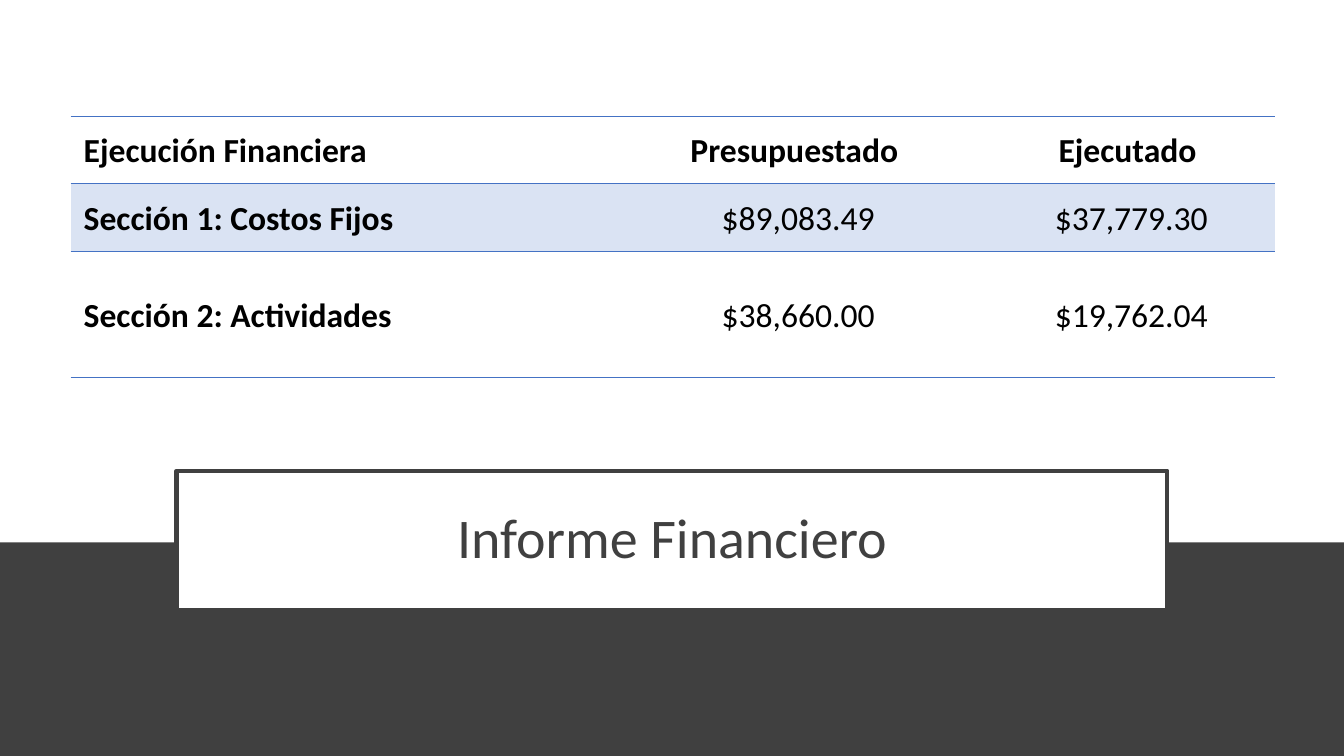
from lxml.etree import SubElement
from pptx import Presentation
from pptx.dml.color import RGBColor
from pptx.enum.shapes import MSO_SHAPE
from pptx.enum.text import MSO_ANCHOR, MSO_AUTO_SIZE, PP_ALIGN
from pptx.oxml.ns import qn
from pptx.util import Cm, Pt

TITLE = "Informe Financiero"
ROWS = [
    ("Ejecución Financiera", "Presupuestado ", "Ejecutado "),
    ("Sección 1: Costos Fijos", "$89,083.49", "$37,779.30"),
    ("Sección 2: Actividades", "$38,660.00", "$19,762.04"),
]
COL_WIDTHS = (13.56, 9.55, 7.24)
ROW_HEIGHTS = (1.7, 1.7, 3.18)
COLORS = {
    "dark": "404040",
    "white": "FFFFFF",
    "text": "000000",
    "rule": "4472C4",
    "stripe": "DAE3F3",
}
FONT = "Calibri"
NO_STYLE = "{2D5ABB26-0587-4C30-8999-92F81FD0307C}"
SLIDE_W, SLIDE_H = 33.87, 19.05
BAND_TOP = 13.67


def color(name):
    return RGBColor.from_string(COLORS[name])


def fill_solid(obj, name):
    obj.fill.solid()
    obj.fill.fore_color.rgb = color(name)


def format_text(tf, size, name, align, spacing, bold=False):
    p = tf.paragraphs[0]
    p.alignment = align
    p.line_spacing = spacing
    font = p.runs[0].font
    font.name, font.size, font.bold = FONT, Pt(size), bold
    font.color.rgb = color(name)


def add_rule(cell, side):
    tcPr = cell._tc.get_or_add_tcPr()
    ln = SubElement(tcPr, qn(f"a:ln{side}"), w=str(Pt(1)))
    fill = SubElement(ln, qn("a:solidFill"))
    SubElement(fill, qn("a:srgbClr"), val=COLORS["rule"])


def add_band(slide):
    sp = slide.shapes.add_shape(
        MSO_SHAPE.RECTANGLE, 0, Cm(BAND_TOP), Cm(SLIDE_W), Cm(SLIDE_H - BAND_TOP))
    sp.shadow.inherit = False
    fill_solid(sp, "dark")
    sp.line.fill.background()
    return sp


def format_title(sp):
    sp.left, sp.top, sp.width, sp.height = Cm(4.45), Cm(11.86), Cm(24.97), Cm(3.51)
    fill_solid(sp, "white")
    sp.line.color.rgb = color("dark")
    sp.line.width = Pt(3)
    tf = sp.text_frame
    tf.text = TITLE
    tf.auto_size = MSO_AUTO_SIZE.NONE
    tf.vertical_anchor = MSO_ANCHOR.MIDDLE
    format_text(tf, 40, "dark", PP_ALIGN.CENTER, 0.9)


def add_budget_table(slide):
    frame = slide.shapes.add_table(
        len(ROWS), len(COL_WIDTHS), Cm(1.78), Cm(2.93),
        Cm(sum(COL_WIDTHS)), Cm(sum(ROW_HEIGHTS)))
    table = frame.table
    table._tbl.tblPr.find(qn("a:tableStyleId")).text = NO_STYLE
    for col, width in zip(table.columns, COL_WIDTHS):
        col.width = Cm(width)
    for row, height in zip(table.rows, ROW_HEIGHTS):
        row.height = Cm(height)
    for i, values in enumerate(ROWS):
        for j, value in enumerate(values):
            cell = table.cell(i, j)
            cell.text = value
            cell.vertical_anchor = MSO_ANCHOR.MIDDLE
            cell.margin_left = cell.margin_right = Cm(0.33)
            cell.margin_top = cell.margin_bottom = 0
            align = PP_ALIGN.CENTER if j else PP_ALIGN.LEFT
            format_text(cell.text_frame, 24, "text", align, 1.07, i == 0 or j == 0)
            if i < 2:
                add_rule(cell, "T")
            if i != 1:
                add_rule(cell, "B")
            if i == 1:
                fill_solid(cell, "stripe")
            else:
                cell.fill.background()


def main():
    prs = Presentation()
    prs.slide_width, prs.slide_height = Cm(SLIDE_W), Cm(SLIDE_H)
    slide = prs.slides.add_slide(prs.slide_layouts[5])
    title = slide.shapes.title
    band = add_band(slide)
    band._element.addnext(title._element)
    format_title(title)
    add_budget_table(slide)
    prs.save("out.pptx")


if __name__ == "__main__":
    main()
